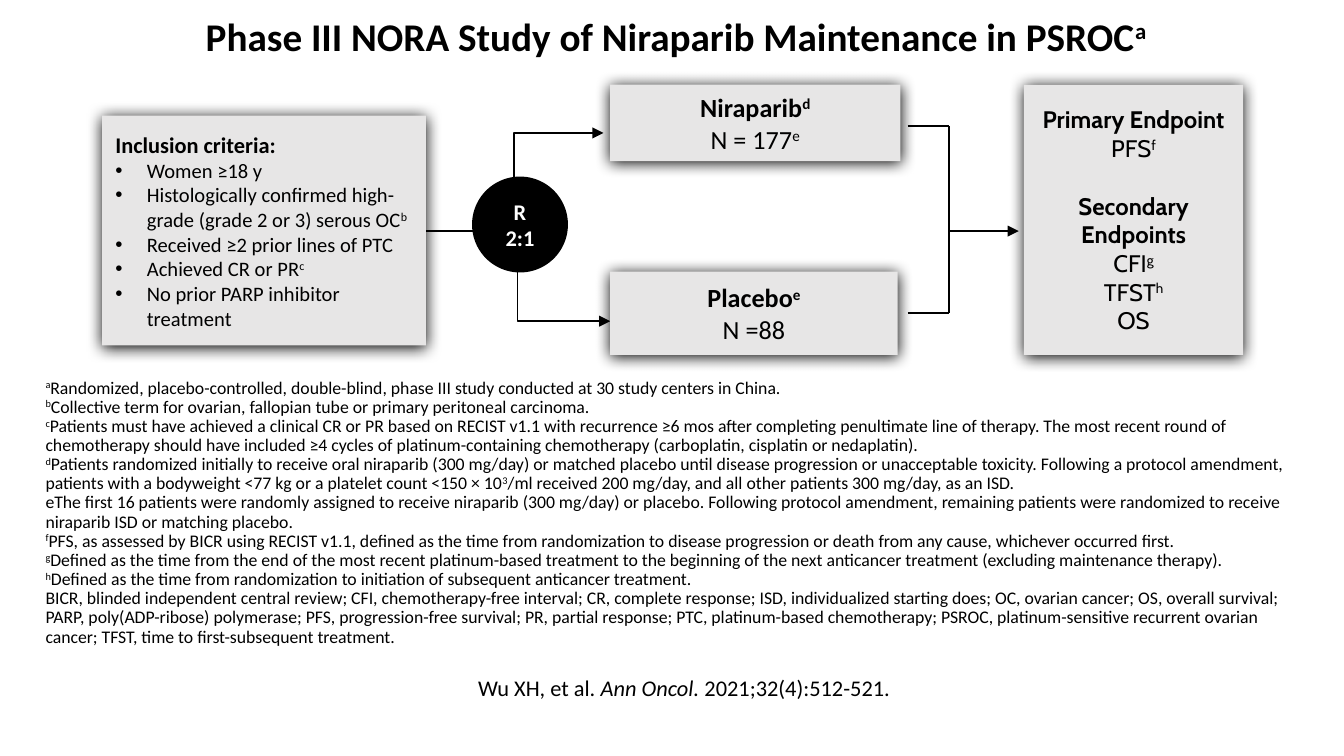
from lxml.etree import SubElement
from pptx import Presentation
from pptx.dml.color import RGBColor
from pptx.enum.shapes import MSO_CONNECTOR as CONNECTOR, MSO_SHAPE as SHAPE
from pptx.enum.text import MSO_ANCHOR as ANCHOR, PP_ALIGN as ALIGN
from pptx.oxml.ns import qn
from pptx.util import Pt

BLACK = RGBColor(0x00, 0x00, 0x00)
WHITE = RGBColor(0xFF, 0xFF, 0xFF)
GREY = RGBColor(0xE7, 0xE6, 0xE6)

CRITERIA = [
    "Women ≥18 y",
    "Histologically confirmed high-grade (grade 2 or 3) serous OC^b^",
    "Received ≥2 prior lines of PTC",
    "Achieved CR or PR^c^",
    "No prior PARP inhibitor treatment",
]
ENDPOINTS = [
    ("Primary Endpoint", True),
    ("PFS^f^", False),
    ("Secondary Endpoints", True),
    ("CFI^g^", False),
    ("TFST^h^", False),
    ("OS", False),
]
FOOTNOTES = [
    "^a^Randomized, placebo-controlled, double-blind, phase III study conducted at 30 study centers in China.",
    "^b^Collective term for ovarian, fallopian tube or primary peritoneal carcinoma.",
    "^c^Patients must have achieved a clinical CR or PR based on RECIST v1.1 with recurrence ≥6 mos after "
    "completing penultimate line of therapy. The most recent round of chemotherapy should have included "
    "≥4 cycles of platinum-containing chemotherapy (carboplatin, cisplatin or nedaplatin).",
    "^d^Patients randomized initially to receive oral niraparib (300 mg/day) or matched placebo until disease "
    "progression or unacceptable toxicity. Following a protocol amendment, patients with a bodyweight <77 kg "
    "or a platelet count <150 × 10^3^/ml received 200 mg/day, and all other patients 300 mg/day, as an ISD.",
    "eThe first 16 patients were randomly assigned to receive niraparib (300 mg/day) or placebo. Following "
    "protocol amendment, remaining patients were randomized to receive niraparib ISD or matching placebo.",
    "^f^PFS, as assessed by BICR using RECIST v1.1, defined as the time from randomization to disease "
    "progression or death from any cause, whichever occurred first.",
    "^g^Defined as the time from the end of the most recent platinum-based treatment to the beginning of the "
    "next anticancer treatment (excluding maintenance therapy).",
    "^h^Defined as the time from randomization to initiation of subsequent anticancer treatment.",
    "BICR, blinded independent central review; CFI, chemotherapy-free interval; CR, complete response; ISD, "
    "individualized starting does; OC, ovarian cancer; OS, overall survival; PARP, poly(ADP-ribose) polymerase; "
    "PFS, progression-free survival; PR, partial response; PTC, platinum-based chemotherapy; PSROC, "
    "platinum-sensitive recurrent ovarian cancer; TFST, time to first-subsequent treatment.",
]


def points(*values):
    return [Pt(value) for value in values]


def add_text(frame, text, size, bold=False, align=ALIGN.LEFT, color=BLACK, font="Calibri", bullet=False):
    first = frame.paragraphs[0]
    paragraph = frame.add_paragraph() if first.runs else first
    paragraph.alignment = align
    for index, part in enumerate(text.split("^")):
        if part:
            run = paragraph.add_run()
            run.text = part
            if index % 2:
                run._r.get_or_add_rPr().set("baseline", "30000")
    if bullet:
        properties = paragraph._p.get_or_add_pPr()
        properties.set("marL", str(Pt(16.9)))
        properties.set("indent", str(-Pt(16.9)))
        SubElement(properties, qn("a:buFont"), typeface="Arial")
        SubElement(properties, qn("a:buChar"), char="•")
    paragraph.font.size = Pt(size)
    paragraph.font.bold = bold
    paragraph.font.name = font
    paragraph.font.color.rgb = color
    return paragraph


def add_text_box(slide, box):
    frame = slide.shapes.add_textbox(*points(*box)).text_frame
    frame.word_wrap = True
    return frame


def add_card(slide, box):
    card = slide.shapes.add_shape(SHAPE.RECTANGLE, *points(*box))
    card.shadow.inherit = False
    card.fill.solid()
    card.fill.fore_color.rgb = GREY
    card.line.fill.background()
    effects = card._element.spPr.find(qn("a:effectLst"))
    shadow = SubElement(effects, qn("a:outerShdw"), blurRad=str(Pt(8.5)), dist=str(Pt(1)),
                        dir="5400000", algn="t", rotWithShape="0")
    SubElement(shadow, qn("a:srgbClr"), val=str(BLACK))
    card.text_frame.word_wrap = True
    card.text_frame.vertical_anchor = ANCHOR.MIDDLE
    return card.text_frame


def add_line(slide, start, end, kind=CONNECTOR.STRAIGHT, arrow=False):
    connector = slide.shapes.add_connector(kind, *points(*start, *end))
    connector.line.color.rgb = BLACK
    connector.line.width = Pt(1)
    properties = connector._element.spPr
    if arrow:
        SubElement(properties.find(qn("a:ln")), qn("a:tailEnd"), type="triangle")
    SubElement(properties, qn("a:effectLst"))


def add_title(slide, box):
    frame = add_text_box(slide, box)
    frame.margin_left = frame.margin_top = frame.margin_right = frame.margin_bottom = 0
    title = add_text(frame, "Phase III NORA Study of Niraparib Maintenance in PSROC^a^", 21, True, ALIGN.CENTER)
    title.line_spacing = 0.9


def add_criteria(slide, box):
    frame = add_card(slide, box)
    add_text(frame, "Inclusion criteria:", 12, True)
    for criterion in CRITERIA:
        add_text(frame, criterion, 11, bullet=True)


def add_arm(slide, box, name, count):
    frame = add_card(slide, box)
    add_text(frame, name, 14, True, ALIGN.CENTER)
    add_text(frame, count, 14, False, ALIGN.CENTER)


def add_endpoints(slide, box):
    frame = add_card(slide, box)
    for index, (text, heading) in enumerate(ENDPOINTS):
        paragraph = add_text(frame, text, 12.8, heading, ALIGN.CENTER, font="Cabin")
        if heading and index:
            paragraph.space_before = Pt(15.4)


def add_randomization(slide, box):
    circle = slide.shapes.add_shape(SHAPE.OVAL, *points(*box))
    circle.shadow.inherit = False
    circle.fill.solid()
    circle.fill.fore_color.rgb = BLACK
    circle.line.color.rgb = BLACK
    circle.line.width = Pt(1)
    circle.text_frame.vertical_anchor = ANCHOR.MIDDLE
    for text in ("R", "2:1"):
        add_text(circle.text_frame, text, 12, True, ALIGN.CENTER, WHITE)


def add_study_design(slide, left, top):
    def at(x, y, *size):
        return (left + x, top + y, *size)

    middle = 78.4
    for arm_end in (at(272.2, 126.7), at(268.6, 25.9)):
        add_line(slide, at(172.8, middle), arm_end, CONNECTOR.ELBOW, arrow=True)
    add_criteria(slide, at(0, 16.6, 173.5, 123.1))
    add_arm(slide, at(272.2, 0, 155.5, 41), "Niraparib^d^", "N = 177^e^")
    add_arm(slide, at(272.2, 100.1, 154.1, 44.6), "Placebo^e^", "N =88")
    add_endpoints(slide, at(493.9, 0, 117.4, 144.7))
    add_randomization(slide, at(198.7, 49.7, 50.4, 50.4))
    bracket, upper, lower = 453.8, 22.3, 122.4
    for y in (upper, lower):
        add_line(slide, at(431.6, y), at(bracket, y))
    add_line(slide, at(bracket, upper), at(bracket, lower))
    add_line(slide, at(bracket, middle), at(491.1, middle), arrow=True)


def add_footnotes(slide, box):
    frame = add_text_box(slide, box)
    for footnote in FOOTNOTES:
        add_text(frame, footnote, 9.5).line_spacing = 0.9


def add_citation(slide, box):
    paragraph = add_text(add_text_box(slide, box), "Wu XH, et al. ", 12)
    journal = paragraph.add_run()
    journal.text = "Ann Oncol. "
    journal.font.italic = True
    paragraph.add_run().text = "2021;32(4):512-521."


def main():
    presentation = Presentation()
    presentation.slide_width = Pt(720)
    presentation.slide_height = Pt(405)
    slide = presentation.slides.add_slide(presentation.slide_layouts[6])
    add_title(slide, (22.3, 9.4, 679.7, 64.8))
    add_study_design(slide, 54.7, 45.4)
    add_footnotes(slide, (17.3, 199.4, 687.6, 151.2))
    add_citation(slide, (249.1, 357.8, 465.8, 21.6))
    presentation.save("out.pptx")


if __name__ == "__main__":
    main()
